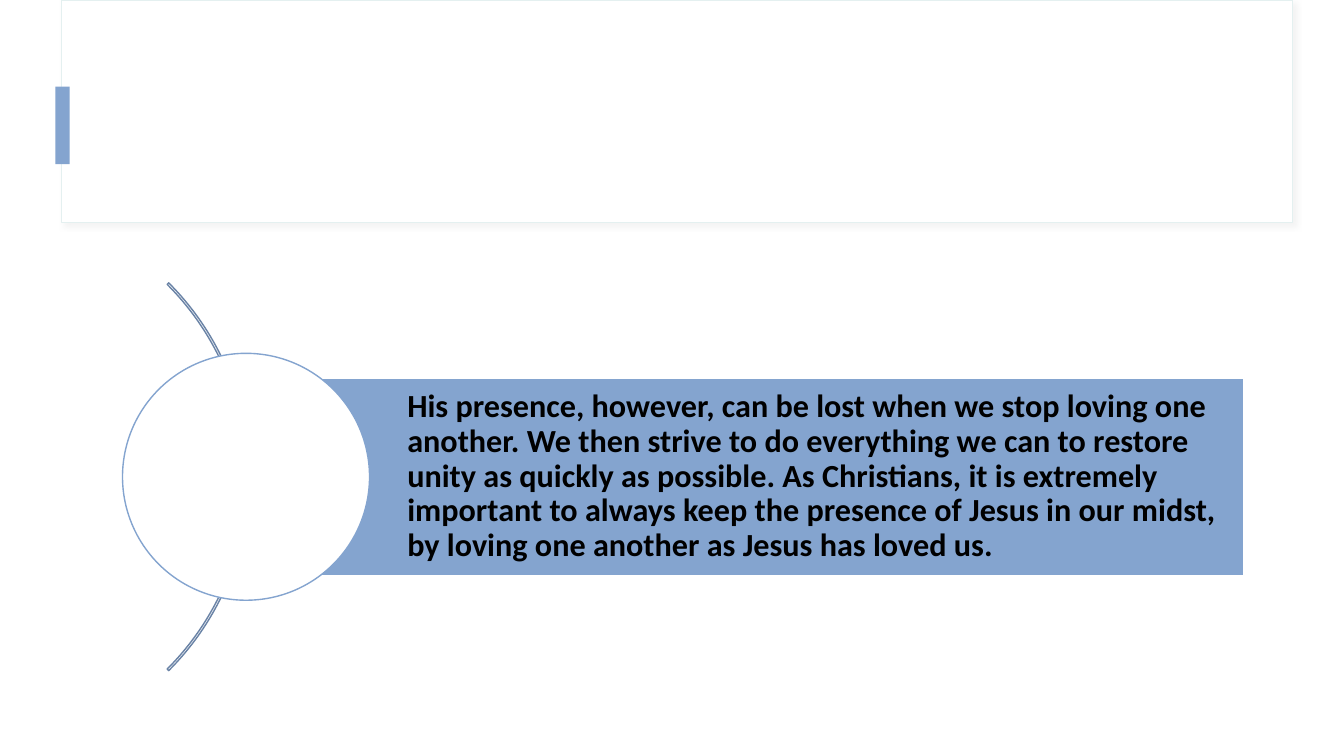
from dataclasses import dataclass

from lxml.etree import SubElement
from pptx import Presentation
from pptx.dml.color import RGBColor
from pptx.enum.shapes import MSO_SHAPE
from pptx.enum.text import MSO_ANCHOR, PP_ALIGN
from pptx.oxml.ns import qn
from pptx.util import Inches, Pt


@dataclass(frozen=True)
class Theme:
    white: str = "FFFFFF"
    accent: str = "84A4CF"
    arc: str = "6A83A6"
    frame: str = "E4F0F0"
    shadow: str = "D9D9D9"
    text: str = "000000"
    font: str = "Calibri"
    body_size: float = 23


THEME = Theme()
MESSAGE = (
    "His presence, however, can be lost when we stop loving one another. "
    "We then strive to do everything we can to restore unity as quickly as possible. "
    "As Christians, it is extremely important to always keep the presence of Jesus "
    "in our midst, by loving one another as Jesus has loved us."
)


def add_part(slide, kind, box, fill=None, line=None, line_width=1):
    part = slide.shapes.add_shape(kind, *(Inches(length) for length in box))
    part.shadow.inherit = False
    if fill:
        part.fill.solid()
        part.fill.fore_color.rgb = RGBColor.from_string(fill)
    else:
        part.fill.background()
    if line:
        part.line.color.rgb = RGBColor.from_string(line)
        part.line.width = Pt(line_width)
    else:
        part.line.fill.background()
    return part


def add_soft_shadow(part):
    effects = part._element.spPr.find(qn("a:effectLst"))
    shadow = SubElement(effects, qn("a:outerShdw"), blurRad=str(Pt(4)),
                        dist=str(Pt(3)), dir=str(45 * 60000), rotWithShape="0")
    color = SubElement(shadow, qn("a:srgbClr"), val=THEME.shadow)
    SubElement(color, qn("a:alpha"), val="30000")


def add_header(slide, left, top, width, height):
    # Framed panel with a soft shadow
    panel = add_part(slide, MSO_SHAPE.RECTANGLE, (left, top, width, height),
                     THEME.white, THEME.frame, 0.75)
    add_soft_shadow(panel)

    # Accent marker on the left edge
    marker_width, marker_height = 0.14, 0.77
    add_part(slide, MSO_SHAPE.RECTANGLE,
             (left + 0.01 - marker_width / 2, top + 0.86, marker_width, marker_height),
             THEME.accent)


def add_message(slide, left, top, width, height):
    middle = top + height / 2

    # Arc behind the circle, from -45 to 45 degrees
    arc_size = 5.44
    arc = add_part(slide, MSO_SHAPE.BLOCK_ARC,
                   (left + 0.03 - arc_size, middle - arc_size / 2, arc_size, arc_size),
                   line=THEME.arc)
    for index, value in enumerate((189, 27, 0.004)):
        arc.adjustments[index] = value

    # Band with the message
    band = add_part(slide, MSO_SHAPE.RECTANGLE, (left, top, width, height),
                    THEME.accent, THEME.white)
    frame = band.text_frame
    frame.word_wrap = True
    frame.vertical_anchor = MSO_ANCHOR.MIDDLE
    frame.margin_left = Inches(1.6)
    frame.margin_top = frame.margin_right = frame.margin_bottom = Inches(0.06)
    message = frame.paragraphs[0]
    message.text = MESSAGE
    message.alignment = PP_ALIGN.LEFT
    message.line_spacing = 0.9
    message.font.name = THEME.font
    message.font.size = Pt(THEME.body_size)
    message.font.bold = True
    message.font.color.rgb = RGBColor.from_string(THEME.text)

    # Circle centred on the left end of the band
    circle_size = height * 1.25
    add_part(slide, MSO_SHAPE.OVAL,
             (left - circle_size / 2, middle - circle_size / 2, circle_size, circle_size),
             THEME.white, THEME.accent)


def main():
    deck = Presentation()
    deck.slide_width, deck.slide_height = Inches(13.33), Inches(7.5)
    slide = deck.slides.add_slide(deck.slide_layouts[6])
    add_header(slide, 0.61, 0, 12.21, 2.21)
    add_message(slide, 2.44, 3.75, 9.9, 1.96)
    deck.save("out.pptx")


if __name__ == "__main__":
    main()
